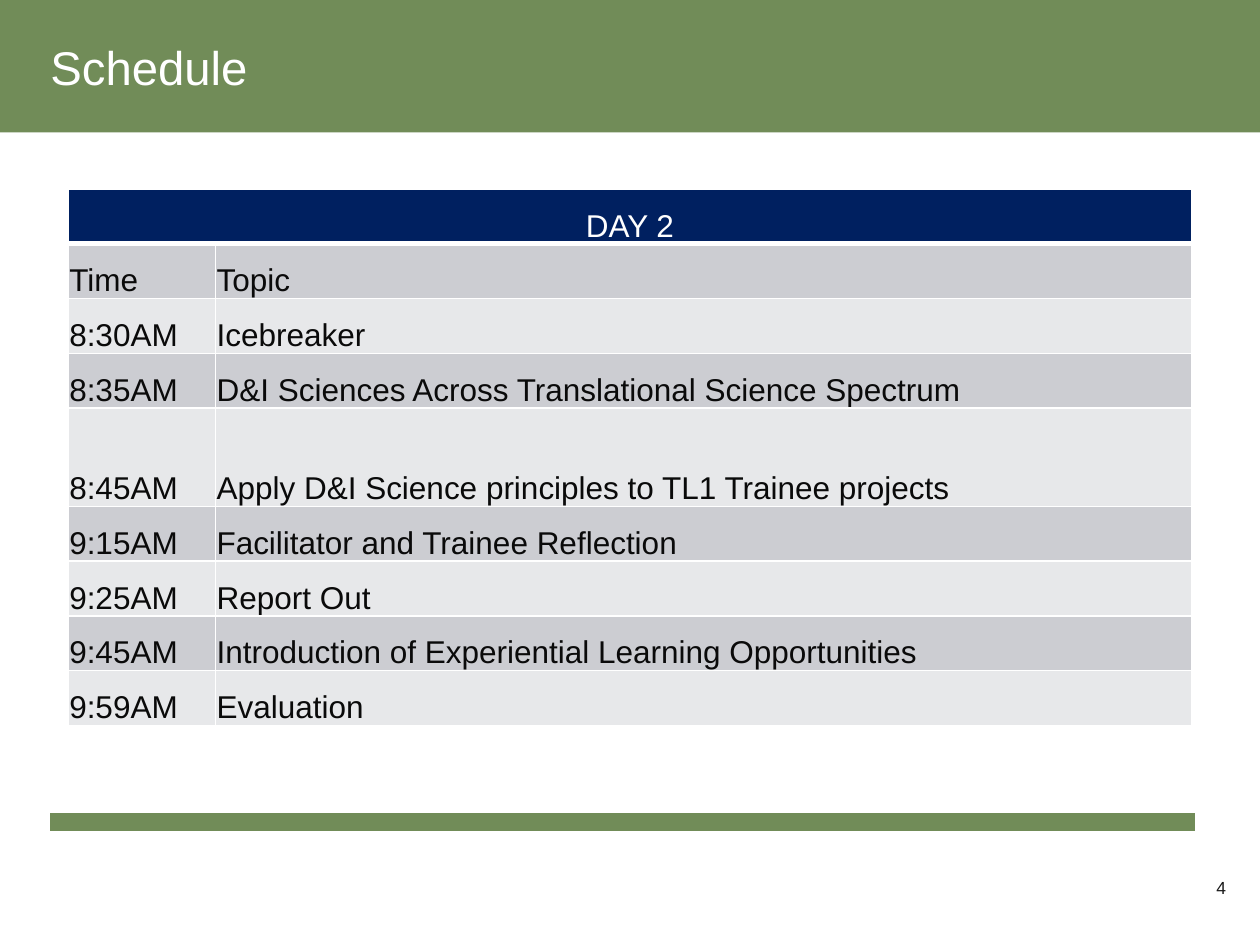
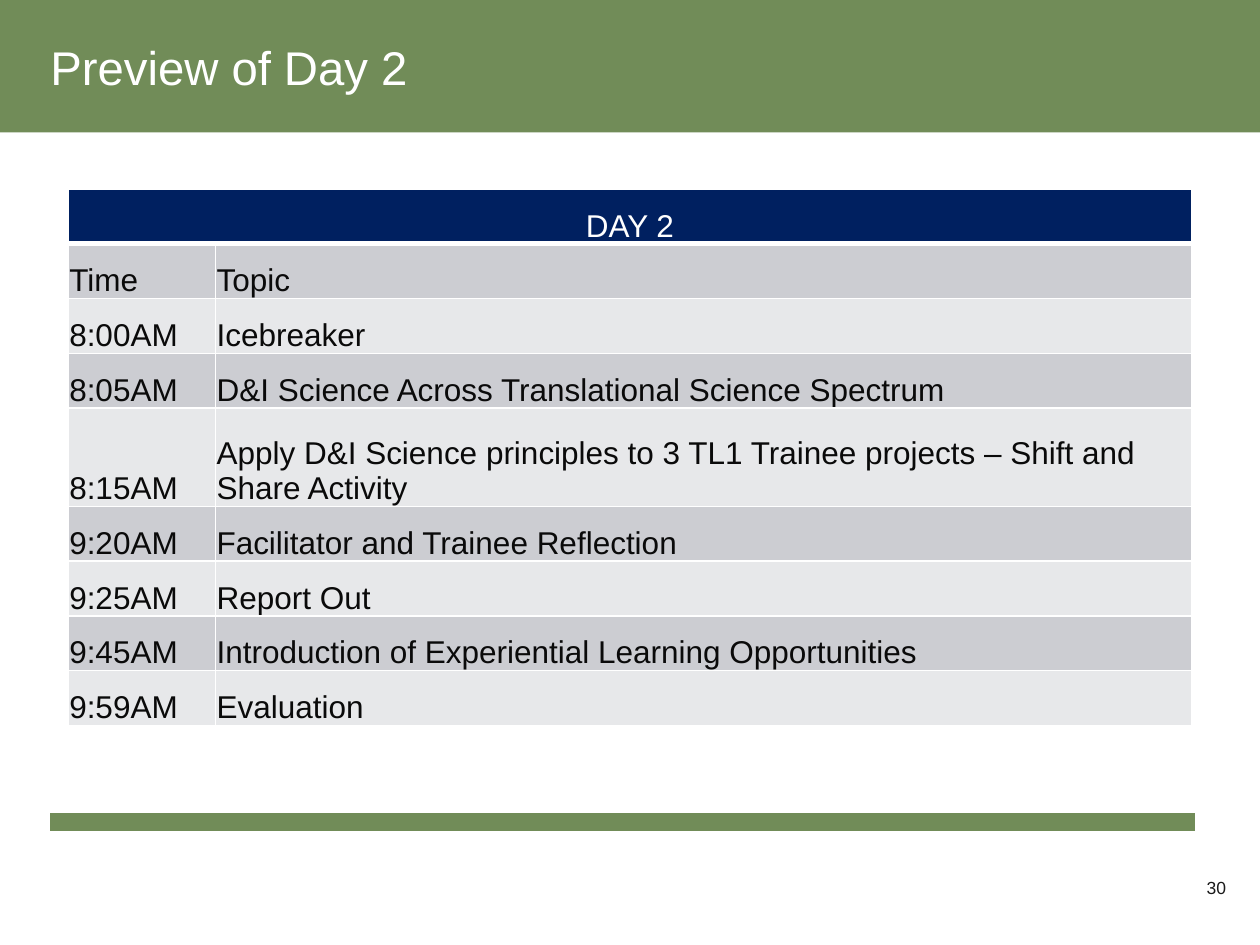
from lxml import etree
from pptx import Presentation
from pptx.dml.color import RGBColor
from pptx.enum.shapes import MSO_CONNECTOR, MSO_SHAPE
from pptx.enum.text import MSO_ANCHOR, PP_ALIGN
from pptx.oxml.ns import qn
from pptx.util import Pt

LEFT, CENTER, RIGHT = PP_ALIGN.LEFT, PP_ALIGN.CENTER, PP_ALIGN.RIGHT
TOP, BOTTOM = MSO_ANCHOR.TOP, MSO_ANCHOR.BOTTOM
RECT, STRAIGHT = MSO_SHAPE.RECTANGLE, MSO_CONNECTOR.STRAIGHT

# Content: title, page number, agenda rows
HEAD = "DAY 2"
LABELS = ("Time", "Topic")
CLOSING = [
    ("9:25AM", "Report Out"),
    ("9:45AM", "Introduction of Experiential Learning Opportunities"),
    ("9:59AM", "Evaluation"),
]
SLIDES = [
    ("Schedule", "4", [
        ("8:30AM", "Icebreaker"),
        ("8:35AM", "D&I Sciences Across Translational Science Spectrum"),
        ("8:45AM", "Apply D&I Science principles to TL1 Trainee projects"),
        ("9:15AM", "Facilitator and Trainee Reflection"),
    ]),
    ("Preview of Day 2", "30", [
        ("8:00AM", "Icebreaker"),
        ("8:05AM", "D&I Science Across Translational Science Spectrum"),
        ("8:15AM", "Apply D&I Science principles to 3 TL1 Trainee projects"
                   " – Shift and Share Activity"),
        ("9:20AM", "Facilitator and Trainee Reflection"),
    ]),
]

# Shared look, lengths in points
FONT = "Arial"
GREEN, NAVY, WHITE = "718C58", "002060", "FFFFFF"
INK, GREY = "0A0A0A", "1A1A1A"
STRIPES = ("E7E8EA", "CCCDD2")
WIDTH, HEIGHT = 720, 540
MARGIN = 28.8
COLS = (84.2, 558)
ROW, TALL, TALL_ROW = 31.3, 56.2, 4


def color(code):
    return RGBColor.from_string(code)


def write(frame, text, size=18, ink=INK, align=LEFT, anchor=TOP,
          inset=(0, 0, 0, 0), wrap=True):
    frame.word_wrap = wrap
    frame.vertical_anchor = anchor
    (frame.margin_left, frame.margin_top,
     frame.margin_right, frame.margin_bottom) = map(Pt, inset)
    frame.text = text
    para = frame.paragraphs[0]
    para.alignment = align
    para.space_before = Pt(0)
    font = para.runs[0].font
    font.name, font.size, font.bold = FONT, Pt(size), False
    font.color.rgb = color(ink)


def border(cell, **widths):
    props = cell._tc.get_or_add_tcPr()
    for side in "LRTB":
        line = etree.SubElement(props, qn("a:ln" + side),
                                w=str(Pt(widths.get(side, 1))))
        fill = etree.SubElement(line, qn("a:solidFill"))
        etree.SubElement(fill, qn("a:srgbClr"), val=WHITE)


def frame_slide(slide, name, page):
    shapes = slide.shapes
    # Title band
    band = shapes.add_shape(RECT, 0, Pt(-2.9), Pt(WIDTH), Pt(78.5))
    band.shadow.inherit = False
    band.fill.solid()
    band.fill.fore_color.rgb = color(GREEN)
    band.line.fill.background()
    # Title, brought in front of the band
    title = shapes.title
    title.left, title.top, title.width, title.height = map(
        Pt, (MARGIN, 18, 504, 74))
    write(title.text_frame, name, size=27, ink=WHITE, inset=(0, 3.6, 0, 3.6))
    title.element.getparent().append(title.element)
    # Footer rule
    rule = shapes.add_connector(STRAIGHT, Pt(MARGIN), Pt(469.6),
                                Pt(682.6), Pt(469.6))
    rule.line.color.rgb = color(GREEN)
    rule.line.width = Pt(10)
    etree.SubElement(rule._element.spPr, qn("a:effectLst"))
    # Page number
    box = shapes.add_textbox(Pt(687.6), Pt(501.1), Pt(13), Pt(16))
    write(box.text_frame, page, size=10, ink=GREY, align=RIGHT, wrap=False)


def add_agenda(slide, items):
    rows = [(HEAD, ""), LABELS, *items]
    heights = [TALL if i == TALL_ROW else ROW for i in range(len(rows))]
    table = slide.shapes.add_table(
        len(rows), len(COLS), Pt(38.9), Pt(108),
        Pt(sum(COLS)), Pt(sum(heights))).table
    for col, width in zip(table.columns, COLS):
        col.width = Pt(width)
    table.cell(0, 0).merge(table.cell(0, 1))
    for i, texts in enumerate(rows):
        table.rows[i].height = Pt(heights[i])
        for j, text in enumerate(texts):
            cell = table.cell(i, j)
            border(cell, T=3 if i == 1 else 1, B=1 if i else 3)
            cell.fill.solid()
            cell.fill.fore_color.rgb = color(STRIPES[i % 2] if i else NAVY)
            if not text:
                continue
            write(cell.text_frame, text, ink=INK if i else WHITE,
                  align=LEFT if i else CENTER)
            cell.vertical_anchor = BOTTOM
            cell.margin_left = cell.margin_top = cell.margin_right = Pt(0.7)
            cell.margin_bottom = 0


def main():
    deck = Presentation()
    deck.slide_width, deck.slide_height = Pt(WIDTH), Pt(HEIGHT)
    for name, page, items in SLIDES:
        slide = deck.slides.add_slide(deck.slide_layouts[5])
        frame_slide(slide, name, page)
        add_agenda(slide, items + CLOSING)
    deck.save("out.pptx")


if __name__ == "__main__":
    main()
